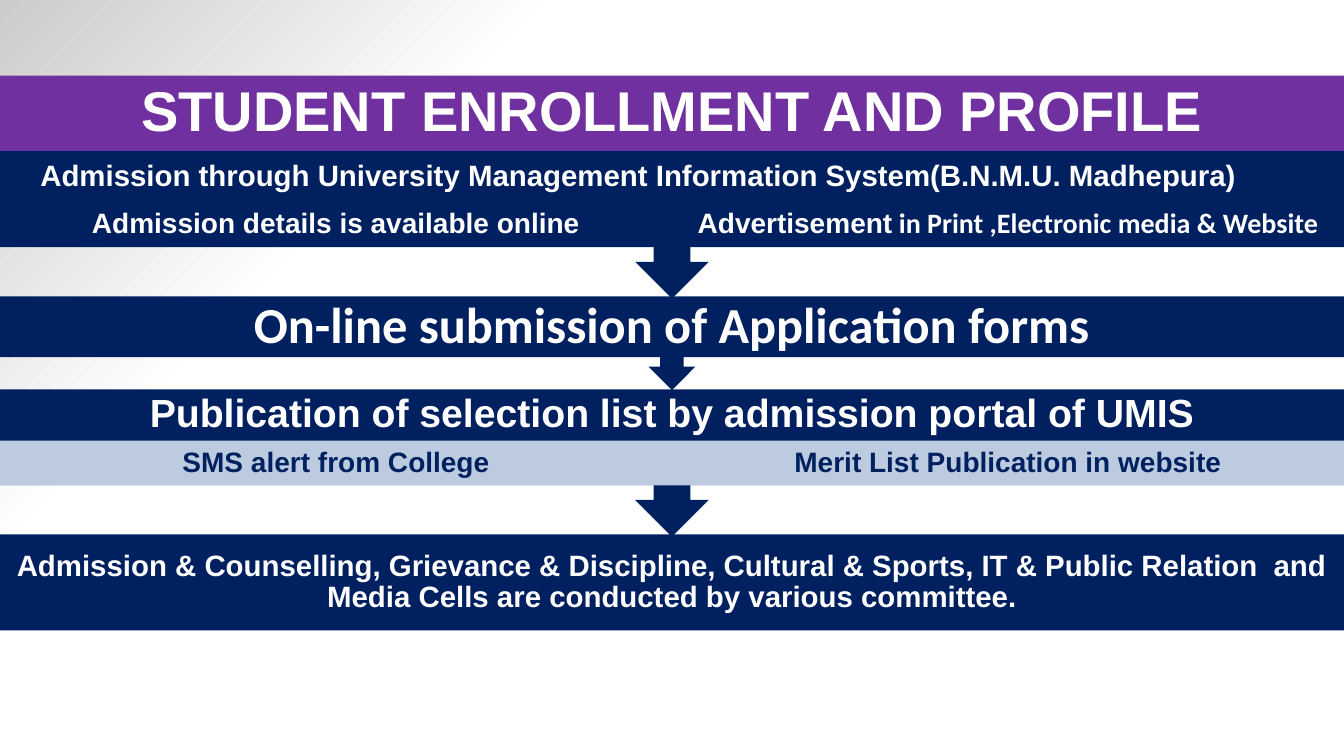
"""Build the student enrollment and profile flow slide."""
from dataclasses import dataclass

from lxml.etree import SubElement
from pptx import Presentation
from pptx.dml.color import RGBColor
from pptx.enum.shapes import MSO_SHAPE as Shape
from pptx.enum.text import MSO_ANCHOR as Anchor, PP_ALIGN as Align
from pptx.oxml.ns import qn
from pptx.util import Inches, Pt


@dataclass(frozen=True)
class Theme:
    navy: RGBColor = RGBColor.from_string("002060")
    purple: RGBColor = RGBColor.from_string("7030A0")
    pale: RGBColor = RGBColor.from_string("D2DEEF")
    white: RGBColor = RGBColor.from_string("FFFFFF")
    grey: RGBColor = RGBColor.from_string("CDCBCB")
    sans: str = "Arial"
    body: str = "Calibri"
    title: int = 40
    headline: int = 36
    heading: int = 28
    text: int = 21
    detail: int = 20


theme = Theme()
deck = Presentation()
deck.slide_width, deck.slide_height = Inches(13.33), Inches(7.5)
row, half = deck.slide_height / 10, deck.slide_width / 2
page = deck.slides.add_slide(deck.slide_layouts[5])


def write(box, text, size, font=theme.sans, color=theme.white, align=Align.CENTER):
    frame = box.text_frame
    frame.word_wrap = True
    frame.vertical_anchor = Anchor.MIDDLE
    frame.margin_top = frame.margin_bottom = 0
    frame.margin_left = frame.margin_right = Inches(0.16)
    para = frame.paragraphs[0]
    para.text, para.alignment, para.line_spacing = text, align, 0.9
    para.font.name, para.font.size, para.font.bold = font, Pt(size), True
    para.font.color.rgb = color
    return frame


def add_band(kind, left, top, width, height, fill):
    box = page.shapes.add_shape(kind, *(round(n) for n in (left, top * row, width, height * row)))
    box.shadow.inherit = False
    box.fill.solid()
    box.fill.fore_color.rgb = fill
    box.line.fill.background()
    return box


backdrop = page.background.fill
backdrop.gradient()
for stop, position, color in zip(backdrop.gradient_stops, (0.73, 1), (theme.white, theme.grey)):
    stop.position, stop.color.rgb = position, color
gradient = page.background._cSld.find(".//" + qn("a:gradFill"))
gradient.remove(gradient.find(qn("a:lin")))
circle = SubElement(gradient, qn("a:path"), path="circle")
SubElement(circle, qn("a:fillToRect"), l="100000", t="100000")

title = page.shapes.title
title.left, title.top, title.width, title.height = 0, round(row), deck.slide_width, round(row)
title.fill.solid()
title.fill.fore_color.rgb = theme.purple
write(title, "STUDENT ENROLLMENT AND PROFILE", theme.title)

closing = add_band(Shape.RECTANGLE, 0, 7.07, deck.slide_width, 1.27, theme.navy)
write(closing, "Admission & Counselling, Grievance & Discipline, Cultural & Sports, "
      "IT & Public Relation  and Media Cells are conducted by various committee.", theme.text)

detail_height = 0.59
steps = [
    (5.15, 1.95, "Publication of selection list by admission portal of UMIS",
     theme.heading, theme.sans, Align.CENTER, theme.pale, theme.navy,
     [["SMS alert from College"], ["Merit List Publication in website"]]),
    (3.92, 1.24, "On-line submission of Application forms",
     theme.headline, theme.body, Align.CENTER, theme.navy, theme.white, []),
    (2, 1.95, "Admission through University Management Information System(B.N.M.U. Madhepura)",
     theme.text, theme.sans, Align.LEFT, theme.navy, theme.white,
     [["Admission details is available online"],
      ["Advertisement", " in Print ,Electronic media & Website"]]),
]
for top, height, heading, size, font, align, fill, ink, details in steps:
    callout = add_band(Shape.DOWN_ARROW_CALLOUT, 0, top, deck.slide_width, height, theme.navy)
    frame = write(callout, heading, size, font, align=align)
    if align == Align.LEFT:
        frame.margin_left = Inches(0.4)
    if details:
        frame.margin_bottom = round(detail_height * row)
    for column, (lead, *rest) in enumerate(details):
        cell = add_band(Shape.RECTANGLE, column * half, top + 0.68, half, detail_height, fill)
        tint = cell.fill._xPr.find(".//" + qn("a:srgbClr"))
        SubElement(tint, qn("a:alpha"), val="90000")
        para = write(cell, lead, theme.detail, color=ink).paragraphs[0]
        for text in rest:
            span = para.add_run()
            span.text, span.font.name = text, theme.body

deck.save("out.pptx")
